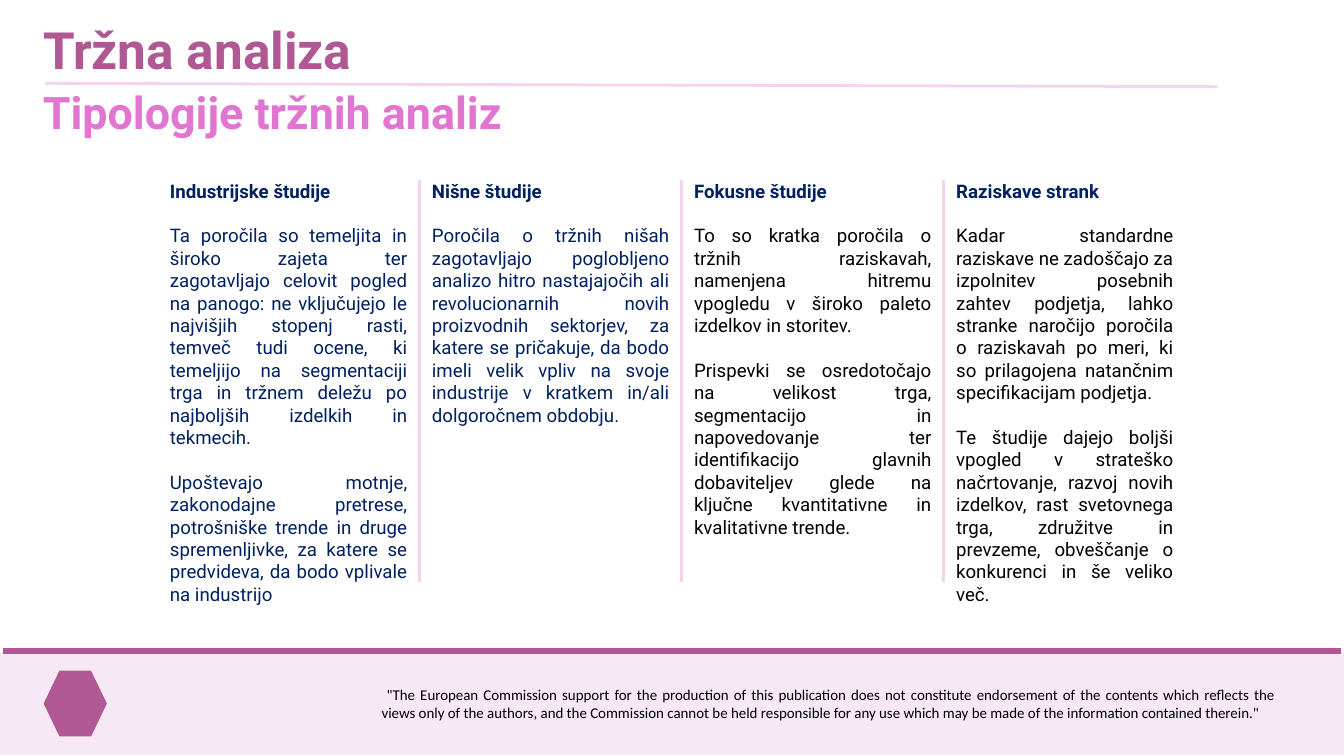
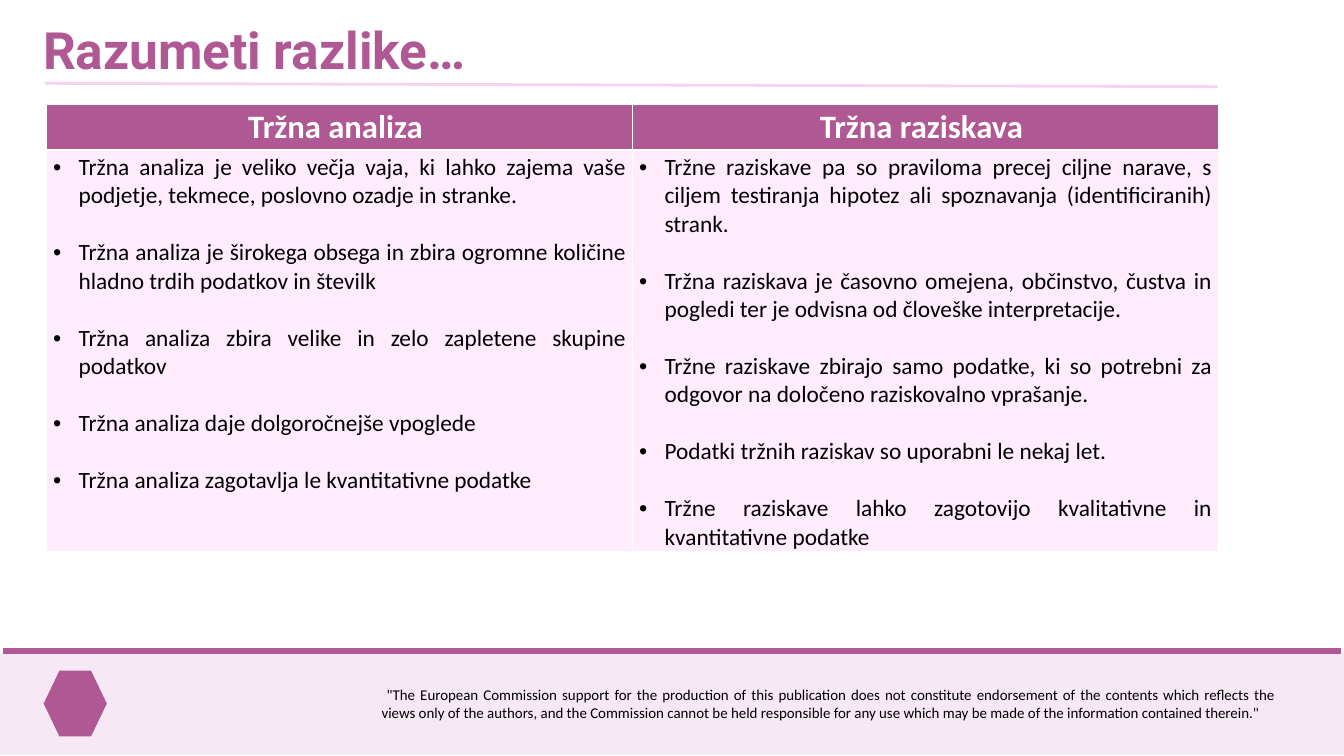
from lxml.etree import SubElement
from pptx import Presentation
from pptx.dml.color import RGBColor
from pptx.enum.shapes import MSO_CONNECTOR, MSO_SHAPE
from pptx.enum.text import MSO_ANCHOR, MSO_AUTO_SIZE, PP_ALIGN
from pptx.oxml.ns import qn
from pptx.util import Inches, Pt

PLUM, PINK, ROSE = "B05894", "E076D1", "F5D3F0"
BAND, BLUSH = "F6E9F5", "FFECFC"
NAVY, BLACK, WHITE = "002060", "000000", "FFFFFF"
HEAD, BODY = "Roboto", "Calibri"

NOTICE = (
    ' "The European Commission support for the production of this publication '
    "does not constitute endorsement of the contents which reflects the views "
    "only of the authors, and the Commission cannot be held responsible for any "
    'use which may be made of the information contained therein."'
)

STUDIES = [
    ("Industrijske študije", NAVY, [
        "Ta poročila so temeljita in široko zajeta ter zagotavljajo celovit "
        "pogled na panogo: ne vključujejo le najvišjih stopenj rasti, temveč "
        "tudi ocene, ki temeljijo na segmentaciji trga in tržnem deležu po "
        "najboljših izdelkih in tekmecih.",
        "Upoštevajo motnje, zakonodajne pretrese, potrošniške trende in druge "
        "spremenljivke, za katere se predvideva, da bodo vplivale na industrijo",
    ]),
    ("Nišne študije", NAVY, [
        "Poročila o tržnih nišah zagotavljajo poglobljeno analizo hitro "
        "nastajajočih ali revolucionarnih novih proizvodnih sektorjev, za "
        "katere se pričakuje, da bodo imeli velik vpliv na svoje industrije v "
        "kratkem in/ali dolgoročnem obdobju.",
    ]),
    ("Fokusne študije", BLACK, [
        "To so kratka poročila o tržnih raziskavah, namenjena hitremu vpogledu "
        "v široko paleto izdelkov in storitev.",
        "Prispevki se osredotočajo na velikost trga, segmentacijo in "
        "napovedovanje ter identifikacijo glavnih dobaviteljev glede na ključne "
        "kvantitativne in kvalitativne trende.",
    ]),
    ("Raziskave strank", BLACK, [
        "Kadar standardne raziskave ne zadoščajo za izpolnitev posebnih zahtev "
        "podjetja, lahko stranke naročijo poročila o raziskavah po meri, ki so "
        "prilagojena natančnim specifikacijam podjetja.",
        "Te študije dajejo boljši vpogled v strateško načrtovanje, razvoj novih "
        "izdelkov, rast svetovnega trga, združitve in prevzeme, obveščanje o "
        "konkurenci in še veliko več.",
    ]),
]

CONTRAST = [
    ("Tržna analiza ", [
        "Tržna analiza je veliko večja vaja, ki lahko zajema vaše podjetje, "
        "tekmece, poslovno ozadje in stranke.",
        "Tržna analiza je širokega obsega in zbira ogromne količine hladno "
        "trdih podatkov in številk",
        "Tržna analiza zbira velike in zelo zapletene skupine podatkov",
        "Tržna analiza daje dolgoročnejše vpoglede",
        "Tržna analiza zagotavlja le kvantitativne podatke",
    ]),
    ("Tržna raziskava ", [
        "Tržne raziskave pa so praviloma precej ciljne narave, s ciljem "
        "testiranja hipotez ali spoznavanja (identificiranih) strank.",
        "Tržna raziskava je časovno omejena, občinstvo, čustva in pogledi ter "
        "je odvisna od človeške interpretacije.",
        "Tržne raziskave zbirajo samo podatke, ki so potrebni za odgovor na "
        "določeno raziskovalno vprašanje.",
        "Podatki tržnih raziskav so uporabni le nekaj let.",
        "Tržne raziskave lahko zagotovijo kvalitativne in kvantitativne podatke",
    ]),
]


def tint(code):
    return RGBColor.from_string(code)


def box_of(*sides):
    return [Inches(side) for side in sides]


def write(frame, text, size=20, color=BLACK, font=HEAD, bold=False,
          align=PP_ALIGN.LEFT, gap=0, bullet=False):
    """Add a paragraph; the first one fills the empty paragraph of the frame."""
    first = frame.paragraphs[0]
    para = frame.add_paragraph() if first.runs else first
    props = para._p.get_or_add_pPr()
    if bullet:
        props.set("marL", str(Inches(0.38)))
        props.set("indent", str(-Inches(0.38)))
        SubElement(props, qn("a:buFont"), typeface="Arial")
        SubElement(props, qn("a:buChar"), char="•")
    para.alignment = align
    if gap:
        para.space_before = Pt(gap)
    run = para.add_run()
    run.text = text
    run.font.size, run.font.bold, run.font.name = Pt(size), bold, font
    run.font.color.rgb = tint(color)


def setup(shape, box):
    """Place a text shape in its box and return its wrapped frame."""
    shape.left, shape.top, shape.width, shape.height = box_of(*box)
    frame = shape.text_frame
    frame.word_wrap = True
    frame.auto_size = MSO_AUTO_SIZE.NONE
    frame.vertical_anchor = MSO_ANCHOR.TOP
    return frame


def add_text(slide, box):
    return setup(slide.shapes.add_textbox(0, 0, 0, 0), box)


def add_block(slide, kind, box, color):
    shape = slide.shapes.add_shape(kind, *box_of(*box))
    shape.shadow.inherit = False
    shape.fill.solid()
    shape.fill.fore_color.rgb = tint(color)
    shape.line.fill.background()
    return shape


def add_line(slide, ends, color, width):
    line = slide.shapes.add_connector(MSO_CONNECTOR.STRAIGHT, *box_of(*ends))
    line.line.color.rgb = tint(color)
    line.line.width = Pt(width)
    SubElement(line._element.spPr, qn("a:effectLst"))
    return line


def add_footer(slide, left, top, width, height):
    """Build the bottom band and move it to the layout all slides share."""
    tree = slide.slide_layout.shapes.element
    for holder in list(slide.slide_layout.placeholders)[1:]:
        tree.remove(holder.element)
    band = add_block(slide, MSO_SHAPE.RECTANGLE, (left, top, width, height), BAND)
    edge = add_line(slide, (left + 0.05, top - 0.03, left + width - 0.05, top - 0.03),
                    PLUM, 6.75)
    mark = add_block(slide, MSO_SHAPE.HEXAGON, (left + 0.65, top + 0.26, 0.94, 0.98), PLUM)
    add_text(slide, (left + 5.58, top + 0.43, 13.5, 0.64))
    note = slide.shapes[-1]
    write(note.text_frame, NOTICE, size=16, font=BODY, align=PP_ALIGN.JUSTIFY)
    for part in (band, edge, mark, note):
        tree.append(part.element)


def add_head(slide, title, left=0.54, top=0.22):
    frame = setup(slide.shapes.title, (left, top, 13.62, 1.03))
    write(frame, title, size=55, color=PLUM, bold=True)
    add_line(slide, (left + 0.13, top + 1.02, left + 17.58, top + 1.07), ROSE, 3)


def add_studies(slide, left, top, step=3.9):
    for i, (name, color, texts) in enumerate(STUDIES):
        x = left + i * step
        last = i == len(STUDIES) - 1
        frame = add_text(slide, (x, top, 3.43 if last else 3.73, 6.16))
        write(frame, name, color=NAVY, bold=True)
        for text in texts:
            write(frame, text, color=color, align=PP_ALIGN.JUSTIFY, gap=24)
        if not last:
            add_line(slide, (x + 3.81, top + 0.06, x + 3.81, top + 6.04), ROSE, 3)


def edge_cell(cell, **widths):
    """Draw white borders; keys are the sides L, R, T, B in that order."""
    props = cell._tc.get_or_add_tcPr()
    for i, (side, width) in enumerate(widths.items()):
        line = SubElement(props, qn(f"a:ln{side}"), w=str(Pt(width)))
        fill = SubElement(line, qn("a:solidFill"))
        SubElement(fill, qn("a:srgbClr"), val=WHITE)
        props.remove(line)
        props.insert(i, line)


def fill_cell(cell, color):
    cell.fill.solid()
    cell.fill.fore_color.rgb = tint(color)
    cell.margin_top, cell.margin_bottom = Inches(0.05), 0
    return cell.text_frame


def add_contrast(slide, box):
    table = slide.shapes.add_table(2, len(CONTRAST), *box_of(*box)).table
    table.rows[0].height = Inches(0.68)
    table.rows[1].height = Inches(box[3] - 0.68)
    for i, (name, points) in enumerate(CONTRAST):
        top, low = table.cell(0, i), table.cell(1, i)
        write(fill_cell(top, PLUM), name, size=35, color=WHITE, font=BODY,
              bold=True, align=PP_ALIGN.CENTER)
        frame = fill_cell(low, BLUSH)
        for j, point in enumerate(points):
            write(frame, point, size=25, font=BODY, align=PP_ALIGN.JUSTIFY,
                  gap=30.5 if j else 0, bullet=True)
        edge_cell(top, L=1, R=1, T=1, B=3)
        edge_cell(low, L=1, R=1, T=3, B=1)


def main():
    deck = Presentation()
    deck.slide_width, deck.slide_height = Inches(20), Inches(11.25)
    plain = deck.slide_layouts[5]

    types = deck.slides.add_slide(plain)
    add_footer(types, 0, 9.72, 20, 1.51)
    add_head(types, "Tržna analiza")
    write(add_text(types, (0.54, 1.21, 14.87, 0.91)), "Tipologije tržnih analiz",
          size=48, color=PINK, bold=True)
    add_studies(types, 2.43, 2.62)

    gaps = deck.slides.add_slide(plain)
    add_head(gaps, "Razumeti razlike…")
    add_contrast(gaps, (0.69, 1.55, 17.44, 6.62))

    deck.save("out.pptx")


if __name__ == "__main__":
    main()
